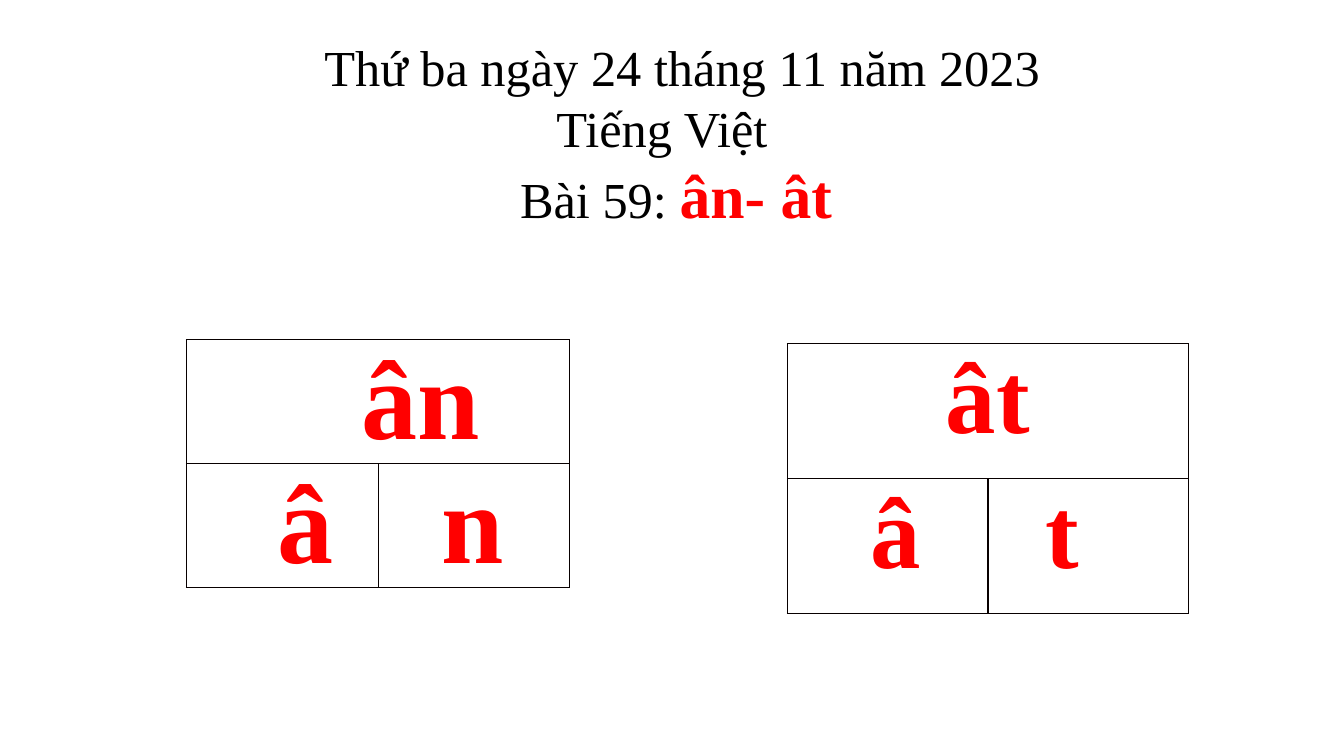
"""Build a Vietnamese spelling lesson slide with two sound tables."""
from dataclasses import dataclass

from lxml import etree
from pptx import Presentation
from pptx.dml.color import RGBColor
from pptx.enum.text import MSO_ANCHOR, MSO_AUTO_SIZE
from pptx.oxml.ns import qn
from pptx.slide import Slide
from pptx.table import _Cell
from pptx.text.text import _Paragraph
from pptx.util import Inches, Pt

BLACK = RGBColor(0, 0, 0)
RED = RGBColor(255, 0, 0)
BORDER = RGBColor(8, 0, 0)
FONT = "Times New Roman"
TOP = MSO_ANCHOR.TOP
GROW = MSO_AUTO_SIZE.SHAPE_TO_FIT_TEXT
CELL_FORMAT = {"margin_left": Inches(0.07), "margin_right": Inches(0.07),
               "margin_top": 0, "margin_bottom": 0, "vertical_anchor": TOP}
PLAIN = {"name": FONT, "size": Pt(36), "bold": False}
ACCENT = {"name": FONT, "size": Pt(44), "bold": True}


@dataclass
class Heading:
    text: str
    indent: float
    accent: str = ""


@dataclass
class SoundTable:
    left: float
    top: float
    column_width: float
    row_height: float
    size: int
    first: str
    second: str


HEADINGS = [
    Heading("Thứ ba ngày 24 tháng 11 năm 2023", 1.06),
    Heading("Tiếng Việt", 3.36),
    Heading("Bài 59: ", 3.0, "ân- ât"),
]
SOUND_TABLES = [
    SoundTable(1.85, 3.37, 1.9, 1.23, 80, "â", "n"),
    SoundTable(7.81, 3.41, 1.99, 1.34, 72, "â", "t"),
]


def add_span(para: _Paragraph, text: str, color: RGBColor, style: dict) -> None:
    span = para.add_run()
    span.text = text
    for name, value in style.items():
        setattr(span.font, name, value)
    span.font.color.rgb = color


def indent_paragraph(para: _Paragraph, indent: float) -> None:
    properties = para._p.get_or_add_pPr()
    properties.set("marL", str(Inches(indent)))
    properties.set("indent", "0")


def add_borders(cell: _Cell) -> None:
    properties = cell._tc.get_or_add_tcPr()
    for position, side in enumerate(("a:lnL", "a:lnR", "a:lnT", "a:lnB")):
        line = etree.Element(qn(side), w=str(Pt(1)))
        fill = etree.SubElement(line, qn("a:solidFill"))
        etree.SubElement(fill, qn("a:srgbClr"), val=str(BORDER))
        properties.insert(position, line)


def add_headings(page: Slide) -> None:
    box = page.shapes.add_textbox(Inches(2.06), Inches(0.31), Inches(9.73), Inches(2.05))
    frame = box.text_frame
    frame.word_wrap = True
    frame.auto_size = GROW
    for number, heading in enumerate(HEADINGS):
        para = frame.add_paragraph() if number else frame.paragraphs[0]
        indent_paragraph(para, heading.indent)
        add_span(para, heading.text, BLACK, PLAIN)
        if heading.accent:
            add_span(para, heading.accent, RED, ACCENT)


def add_sound_table(page: Slide, sound: SoundTable) -> None:
    table = page.shapes.add_table(
        2, 2, Inches(sound.left), Inches(sound.top),
        Inches(2 * sound.column_width), Inches(2 * sound.row_height)).table
    table.first_row = table.horz_banding = False
    for column in table.columns:
        column.width = Inches(sound.column_width)
    for row in table.rows:
        row.height = Inches(sound.row_height)
    table.cell(0, 0).merge(table.cell(0, 1))
    for cell in table.iter_cells():
        for name, value in CELL_FORMAT.items():
            setattr(cell, name, value)
        cell.fill.background()
        add_borders(cell)
    space = sound.size / 72 / 4
    style = {"name": FONT, "size": Pt(sound.size), "bold": True}
    entries = [(0, 0, sound.first + sound.second, 6), (1, 0, sound.first, 3), (1, 1, sound.second, 2)]
    for row, column, text, spaces in entries:
        para = table.cell(row, column).text_frame.paragraphs[0]
        indent_paragraph(para, round(spaces * space, 2))
        add_span(para, text, RED, style)


def main() -> None:
    deck = Presentation()
    deck.slide_width = Inches(13.33)
    deck.slide_height = Inches(7.5)
    page = deck.slides.add_slide(deck.slide_layouts[6])
    for sound in SOUND_TABLES:
        add_sound_table(page, sound)
    add_headings(page)
    deck.save("out.pptx")


if __name__ == "__main__":
    main()
